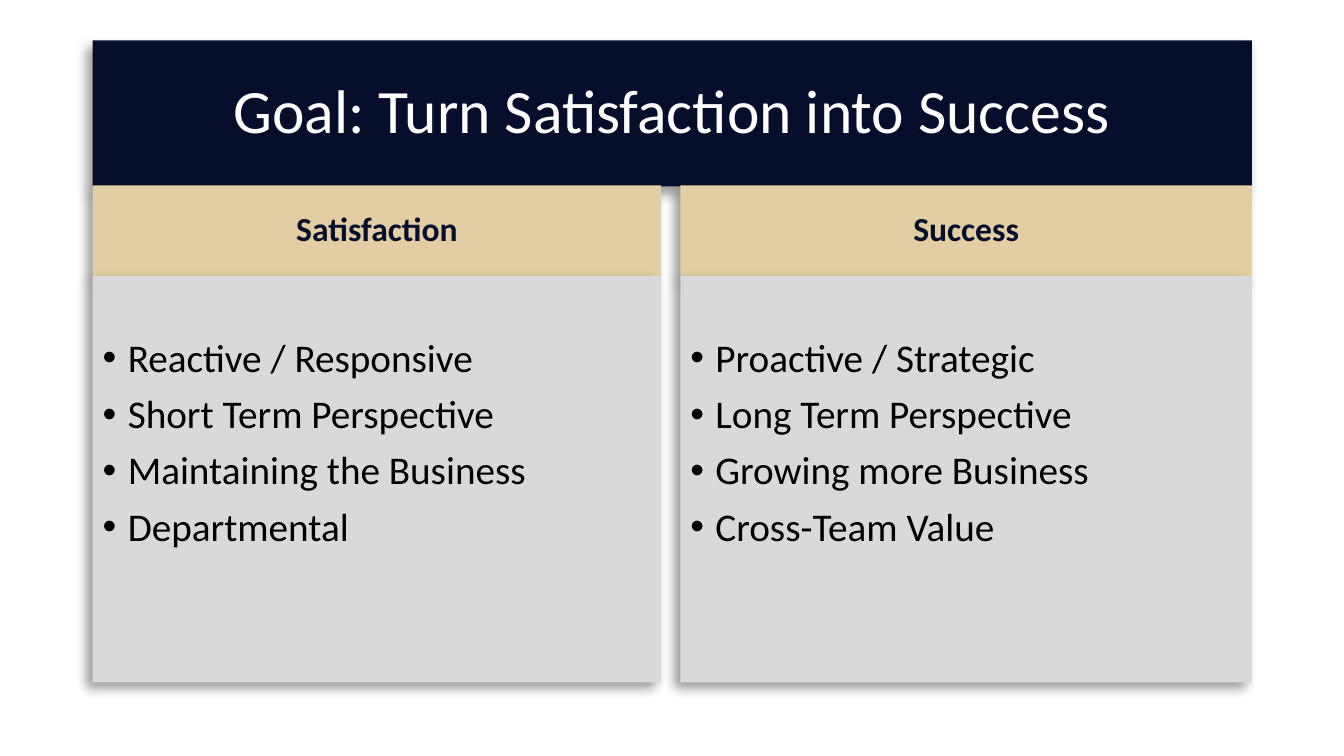
import pptx
import pptx.util
import pptx.dml.color
import pptx.enum.shapes
import pptx.enum.text
import pptx.oxml
import pptx.oxml.ns
from dataclasses import dataclass

Pt = pptx.util.Pt
Align = pptx.enum.text.PP_ALIGN
Anchor = pptx.enum.text.MSO_ANCHOR


@dataclass(frozen=True)
class Theme:
    font: str = "Calibri"
    navy: str = "070E2B"
    sand: str = "E3CEA3"
    gray: str = "D9D9D9"
    white: str = "FFFFFF"
    black: str = "000000"
    title: int = 44
    head: int = 24
    body: int = 28


THEME = Theme()
LEFT, RIGHT = 66.24, 894.24
COLUMNS = [
    (LEFT, 472.32, "Satisfaction",
     ["Reactive / Responsive", "Short Term Perspective",
      "Maintaining the Business", "Departmental"]),
    (486, RIGHT, "Success",
     ["Proactive / Strategic", "Long Term Perspective",
      "Growing more Business", "Cross-Team Value"]),
]


def rgb(color):
    return pptx.dml.color.RGBColor.from_string(color)


def add_shadow(shape):
    ns = pptx.oxml.ns.nsdecls("a")
    shape.shadow.inherit = False
    effects = shape._element.spPr.find(pptx.oxml.ns.qn("a:effectLst"))
    effects.append(pptx.oxml.parse_xml(
        f'<a:outerShdw {ns} blurRad="{Pt(8)}" dist="{Pt(6)}" '
        f'dir="{135 * 60000}" algn="tr" rotWithShape="0">'
        f'<a:srgbClr val="{THEME.black}"><a:alpha val="40000"/></a:srgbClr>'
        '</a:outerShdw>'))


def add_panel(slide, left, top, right, bottom, fill):
    shape = slide.shapes.add_shape(
        pptx.enum.shapes.MSO_SHAPE.RECTANGLE,
        Pt(left), Pt(top), Pt(right - left), Pt(bottom - top))
    shape.fill.solid()
    shape.fill.fore_color.rgb = rgb(fill)
    shape.line.fill.background()
    add_shadow(shape)
    frame = shape.text_frame
    frame.word_wrap = True
    frame.vertical_anchor = Anchor.MIDDLE
    return frame


def add_bullet(para):
    props = para._p.get_or_add_pPr()
    props.set("marL", str(Pt(18)))
    props.set("indent", str(Pt(-18)))
    ns = pptx.oxml.ns.nsdecls("a")
    props.append(pptx.oxml.parse_xml(f'<a:buFont {ns} typeface="Arial"/>'))
    props.append(pptx.oxml.parse_xml(f'<a:buChar {ns} char="•"/>'))


def put_text(para, text, *, size, color, bold=False, align=Align.CENTER,
             before=0, bullet=False):
    if bullet:
        add_bullet(para)
    para.alignment = align
    para.line_spacing = 0.9
    para.space_before = Pt(before)
    run = para.add_run()
    run.text = text
    run.font.name = THEME.font
    run.font.size = Pt(size)
    run.font.bold = bold
    run.font.color.rgb = rgb(color)


def add_list(frame, items):
    frame.vertical_anchor = Anchor.TOP
    frame.margin_top = Pt(44.4)
    for index, item in enumerate(items):
        para = frame.add_paragraph() if index else frame.paragraphs[0]
        put_text(para, item, size=THEME.body, color=THEME.black,
                 align=Align.LEFT, before=10 if index else 0, bullet=True)


def main():
    deck = pptx.Presentation()
    deck.slide_width, deck.slide_height = Pt(960), Pt(540)
    slide = deck.slides.add_slide(deck.slide_layouts[6])

    title = add_panel(slide, LEFT, 28.8, RIGHT, 133.2, THEME.navy)
    put_text(title.paragraphs[0], "Goal: Turn Satisfaction into Success",
             size=THEME.title, color=THEME.white)

    for left, right, name, items in COLUMNS:
        head = add_panel(slide, left, 132.48, right, 197.28, THEME.sand)
        put_text(head.paragraphs[0], name, size=THEME.head,
                 color=THEME.navy, bold=True)
        add_list(add_panel(slide, left, 197.28, right, 487.44, THEME.gray),
                 items)

    deck.save("out.pptx")


if __name__ == "__main__":
    main()
